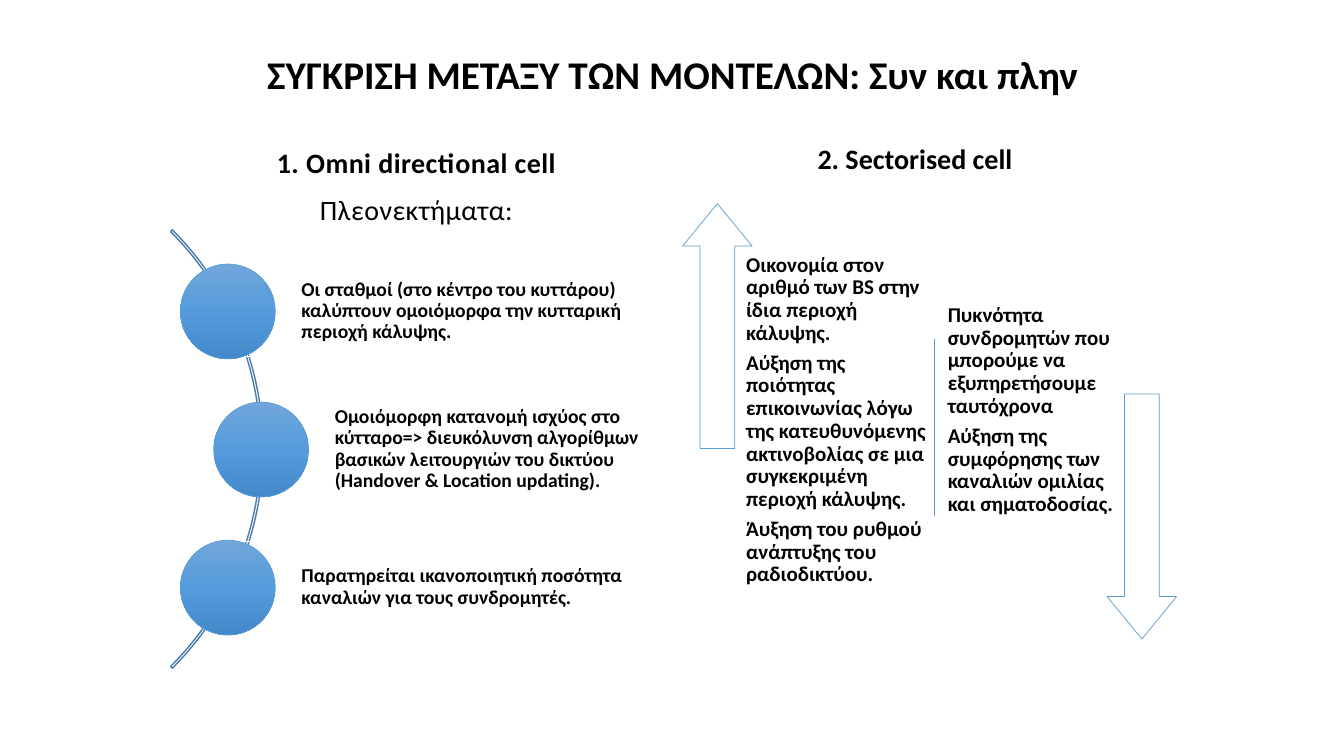
import copy

import pptx
import pptx.dml.color
import pptx.enum.shapes
import pptx.enum.text
import pptx.oxml.ns
import pptx.util
from lxml import etree

Inches, Pt = pptx.util.Inches, pptx.util.Pt
RGB = pptx.dml.color.RGBColor.from_string
SHAPES = pptx.enum.shapes.MSO_SHAPE
ALIGN = pptx.enum.text.PP_ALIGN
ANCHOR = pptx.enum.text.MSO_ANCHOR
qn = pptx.oxml.ns.qn

COLORS = {
    "text": "000000",
    "frame": "FFFFFF",
    "arc": "497CAB",
    "accent": "5B9BD5",
    "ball_top": "71A6DB",
    "ball_middle": "559BDB",
    "ball_bottom": "448ACA",
}


def add_text(place, texts, size, insets=(0.1, 0.05, 0.1, 0.05), align=ALIGN.LEFT,
             anchor=ANCHOR.TOP, spacing=0.9, before=0, after=0):
    """Add a wrapped text box with one bold paragraph per text."""
    box = page.shapes.add_textbox(*map(Inches, place))
    frame = box.text_frame
    frame.word_wrap = True
    frame.vertical_anchor = anchor
    (frame.margin_left, frame.margin_top,
     frame.margin_right, frame.margin_bottom) = map(Inches, insets)
    for index, text in enumerate(texts):
        para = frame.paragraphs[0] if index == 0 else frame.add_paragraph()
        para.alignment = align
        para.line_spacing = spacing
        para.space_before = Pt(before if index else 0)
        para.space_after = Pt(after)
        span = para.add_run()
        span.text = text
        span.font.name = "Calibri"
        span.font.size = Pt(size)
        span.font.bold = True
        span.font.color.rgb = RGB(COLORS["text"])
    return box


def add_outline(kind, place, color, width):
    """Add an unfilled preset shape with a thin line."""
    shape = page.shapes.add_shape(kind, *map(Inches, place))
    shape.shadow.inherit = False
    shape.fill.background()
    shape.line.color.rgb = RGB(COLORS[color])
    shape.line.width = Pt(width)
    return shape


deck = pptx.Presentation()
deck.slide_width, deck.slide_height = Inches(13.33), Inches(7.5)
page = deck.slides.add_slide(deck.slide_layouts[6])

# Headings
add_text((2.26, 0.44, 8.82, 0.64), ["ΣΥΓΚΡΙΣΗ ΜΕΤΑΞΥ ΤΩΝ ΜΟΝΤΕΛΩΝ: Συν και πλην"], 28,
         align=ALIGN.CENTER, anchor=ANCHOR.MIDDLE)
add_text((6.75, 1.39, 4.65, 1.02), ["2. Sectorised cell"], 20, align=ALIGN.CENTER)
omni_heading = add_text((1.67, 1.39, 4.92, 1.02), ["1. Omni directional cell", "Πλεονεκτήματα:"],
                        20, align=ALIGN.CENTER, spacing=1.0, before=4, after=6)
for para in omni_heading.text_frame.paragraphs:
    para.runs[0].font._element.set("spc", "30")
omni_heading.text_frame.paragraphs[1].runs[0].font.bold = False

# Omni directional cell: advantages along an arc
arc = add_outline(SHAPES.BLOCK_ARC, (-3.54, 1.38, 6.15, 6.15), "arc", 1)
for index, value in enumerate((189, 27, 0.004)):
    arc.adjustments[index] = value

advantages = [
    (0, "Οι σταθμοί (στο κέντρο του κυττάρου) καλύπτουν ομοιόμορφα την κυτταρική "
        "περιοχή κάλυψης."),
    (0.33, "Ομοιόμορφη κατανομή ισχύος στο κύτταρο=> διευκόλυνση αλγορίθμων βασικών "
           "λειτουργιών του δικτύου (Handover & Location updating)."),
    (0, "Παρατηρείται ικανοποιητική ποσότητα καναλιών για τους συνδρομητές."),
]
for row, (shift, text) in enumerate(advantages):
    top = 2.63 + 1.37 * row
    box = add_text((2.26 + shift, top, 4.34 - shift, 0.91), [text], 14,
                   insets=(0.73, 0.04, 0.04, 0.04), anchor=ANCHOR.MIDDLE, after=4.9)
    box.line.color.rgb = RGB(COLORS["frame"])
    box.line.width = Pt(1)

    ball = add_outline(SHAPES.OVAL, (1.79 + shift, top - 0.01, 0.94, 0.94), "accent", 0.5)
    ball.fill.gradient()
    ball.fill.gradient_angle = 270
    stops = ball._element.spPr.find(".//" + qn("a:gsLst"))
    middle = copy.deepcopy(stops[0])
    middle.set("pos", "50000")
    stops.insert(1, middle)
    for stop, name in zip(ball.fill.gradient_stops, ("ball_top", "ball_middle", "ball_bottom")):
        stop.color.rgb = RGB(COLORS[name])

# Sectorised cell: pros and cons on either side of a divider
divider = page.shapes.add_connector(pptx.enum.shapes.MSO_CONNECTOR.STRAIGHT,
                                    Inches(9.27), Inches(3.36), Inches(9.27), Inches(5.12))
divider.line.color.rgb = RGB(COLORS["accent"])
divider.line.width = Pt(1)
etree.SubElement(divider._element.spPr, qn("a:effectLst"))

columns = [
    ((7.34, 2.46, 1.92, 2.79), [
        "Οικονομία στον αριθμό των BS στην ίδια περιοχή κάλυψης.",
        "Αύξηση της ποιότητας επικοινωνίας λόγω της κατευθυνόμενης ακτινοβολίας σε μια "
        "συγκεκριμένη περιοχή κάλυψης.",
        "Άυξηση του ρυθμού ανάπτυξης του ραδιοδικτύου.",
    ]),
    ((9.34, 2.96, 1.79, 1.89), [
        "Πυκνότητα συνδρομητών που μπορούμε να εξυπηρετήσουμε ταυτόχρονα",
        "Αύξηση της συμφόρησης των καναλιών ομιλίας και σηματοδοσίας.",
    ]),
]
for place, texts in columns:
    add_text(place, texts, 15, insets=(0.06,) * 4, after=5.25)

for left, top, turn in ((5.9, 2.89, 270), (10.11, 4.78, 90)):
    arrow = add_outline(SHAPES.RIGHT_ARROW, (left, top, 2.43, 0.69), "accent", 0.5)
    arrow.adjustments[0] = 0.5
    arrow.adjustments[1] = 0.61
    arrow.rotation = turn

deck.save("out.pptx")
